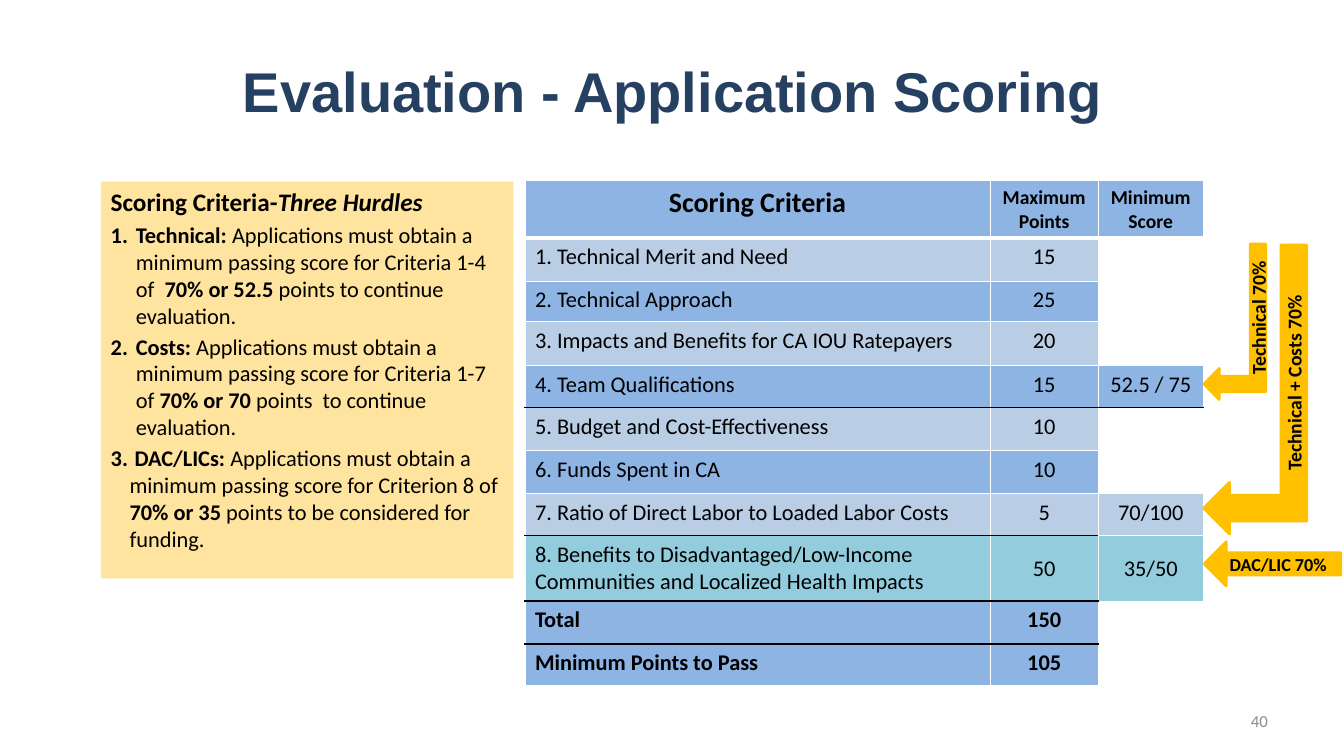
from lxml import etree
from pptx import Presentation, util as u
from pptx.dml import color
from pptx.enum import shapes, text
from pptx.oxml import ns

PX = 9525
BLACK, WHITE, AMBER = "000000", "FFFFFF", "FFC000"
BLUE, PALE, TEAL = "8EB4E3", "B9CDE5", "93CDDD"
LEFT, CENTER, RIGHT = text.PP_ALIGN.LEFT, text.PP_ALIGN.CENTER, text.PP_ALIGN.RIGHT
MIDDLE, TOP = text.MSO_ANCHOR.MIDDLE, text.MSO_ANCHOR.TOP


def rgb(value):
    return color.RGBColor.from_string(value)


def write(paragraph, runs, size, align=LEFT, ink=BLACK, face="Calibri"):
    paragraph.alignment = align
    for words, bold, italic in runs:
        run = paragraph.add_run()
        run.text = words
        run.font.size = u.Pt(size)
        run.font.name = face
        run.font.bold = bold
        run.font.italic = italic
        run.font.color.rgb = rgb(ink)


deck = Presentation()
deck.slide_width, deck.slide_height = 1280 * PX, 720 * PX
slide = deck.slides.add_slide(deck.slide_layouts[6])

captions = [
    ((222, 26, 946, 120), "Evaluation - Application Scoring", True, 40, LEFT, "254061", "Arial"),
    ((918, 667, 299, 38), "40", False, 12, RIGHT, "8C8C8C", "Calibri"),
]
for place, words, bold, size, align, ink, face in captions:
    caption = slide.shapes.add_textbox(*[n * PX for n in place]).text_frame
    caption.word_wrap = True
    caption.vertical_anchor = MIDDLE
    write(caption.paragraphs[0], [(words, bold, False)], size, align, ink, face)

panel = slide.shapes.add_shape(
    shapes.MSO_SHAPE.RECTANGLE, 96 * PX, 173 * PX, 393 * PX, 378 * PX)
panel.shadow.inherit = False
panel.fill.solid()
panel.fill.fore_color.rgb = rgb("FFE49F")
panel.line.fill.background()
panel.text_frame.vertical_anchor = TOP
write(panel.text_frame.paragraphs[0],
      [("Scoring Criteria-", True, False), ("Three Hurdles", True, True)], 18)

hurdles = [
    (24, "Technical: ", "Applications must obtain a minimum passing score for Criteria 1-4 of  ",
     "70% or 52.5 ", "points to continue evaluation."),
    (24, "Costs: ", "Applications must obtain a minimum passing score for Criteria 1-7 of ",
     "70% or 70", " points  to continue evaluation."),
    (18, " DAC/LICs: ", "Applications must obtain a minimum passing score for Criterion 8 of ",
     "70% or 35", " points to be considered for funding."),
]
for indent, *parts in hurdles:
    hurdle = panel.text_frame.add_paragraph()
    hurdle.space_before = u.Pt(3)
    props = hurdle._p.get_or_add_pPr()
    props.set("marL", str(indent * PX))
    props.set("indent", str(-indent * PX))
    etree.SubElement(props, ns.qn("a:buFont"), typeface="+mj-lt")
    etree.SubElement(props, ns.qn("a:buAutoNum"), type="arabicPeriod")
    write(hurdle, [(part, i % 2 == 0, False) for i, part in enumerate(parts)], 16)

scores = [
    ("Scoring Criteria", "Maximum Points", "Minimum Score"),
    ("1. Technical Merit and Need", "15", ""),
    ("2. Technical Approach", "25", ""),
    ("3. Impacts and Benefits for CA IOU Ratepayers", "20", ""),
    ("4. Team Qualifications", "15", "52.5 / 75"),
    ("5. Budget and Cost-Effectiveness", "10", ""),
    ("6. Funds Spent in CA", "10", ""),
    ("7. Ratio of Direct Labor to Loaded Labor Costs", "5", "70/100"),
    ("8. Benefits to Disadvantaged/Low-Income Communities and Localized Health Impacts",
     "50", "35/50"),
    ("Total", "150", ""),
    ("Minimum Points to Pass", "105", ""),
]
row_heights = [55, 41, 38, 42, 40, 41, 41, 40, 62, 41, 40]
row_fills = [BLUE, PALE, BLUE, PALE, BLUE, PALE, BLUE, PALE, TEAL, BLUE, BLUE]
column_widths = [443, 103, 100]
black_below = {4: 3, 7: 2, 8: 2, 9: 2}

grid = slide.shapes.add_table(
    len(scores), 3, 500 * PX, 172 * PX, sum(column_widths) * PX, sum(row_heights) * PX).table
grid.first_row = grid.horz_banding = False
grid._tbl.tblPr.find(ns.qn("a:tableStyleId")).text = "{2D5ABB26-0587-4C30-8999-92F81FD0307C}"
for column, width in zip(grid.columns, column_widths):
    column.width = width * PX
for r, entries in enumerate(scores):
    grid.rows[r].height = row_heights[r] * PX
    for c, words in enumerate(entries):
        cell = grid.cell(r, c)
        edges = {"lnL": (WHITE, 1), "lnR": (WHITE, 1)}
        for edge, above in (("lnT", r - 1), ("lnB", r)):
            if c < black_below.get(above, 0):
                edges[edge] = (BLACK, 1)
            elif c < 2 or above < 7:
                edges[edge] = (WHITE, 3 if above == 0 else 1)
        for edge, (ink, weight) in edges.items():
            border = etree.SubElement(
                cell._tc.get_or_add_tcPr(), ns.qn("a:" + edge), w=str(u.Pt(weight)))
            paint = etree.SubElement(border, ns.qn("a:solidFill"))
            etree.SubElement(paint, ns.qn("a:srgbClr"), val=ink)
        if not words:
            cell.fill.background()
            continue
        cell.fill.solid()
        cell.fill.fore_color.rgb = rgb(row_fills[r])
        cell.vertical_anchor = MIDDLE if r == 8 and c else TOP
        size = (20 if c == 0 else 14) if r == 0 else 16
        write(cell.text_frame.paragraphs[0], [(words, r in (0, 9, 10), False)], size,
              CENTER if r == 0 or c else LEFT)

BENT, STRAIGHT = shapes.MSO_SHAPE.BENT_UP_ARROW, shapes.MSO_SHAPE.LEFT_ARROW
thresholds = [
    (BENT, (1102, 277, 148, 59), "Technical 70%", 14),
    (BENT, (1058, 322, 275, 98), "Technical + Costs 70%", 14),
    (STRAIGHT, (1147, 516, 130, 42), "DAC/LIC 70%", 13),
]
for kind, place, words, size in thresholds:
    arrow = slide.shapes.add_shape(kind, *[n * PX for n in place])
    arrow.shadow.inherit = False
    arrow.fill.solid()
    arrow.fill.fore_color.rgb = rgb(AMBER)
    arrow.line.color.rgb = rgb(AMBER)
    arrow.line.width = u.Pt(2)
    if kind == BENT:
        arrow.rotation = 90
        arrow._element.spPr.xfrm.set("flipV", "1")
    arrow.text_frame.vertical_anchor = MIDDLE
    write(arrow.text_frame.paragraphs[0], [(words, True, False)], size, CENTER)

deck.save("out.pptx")
